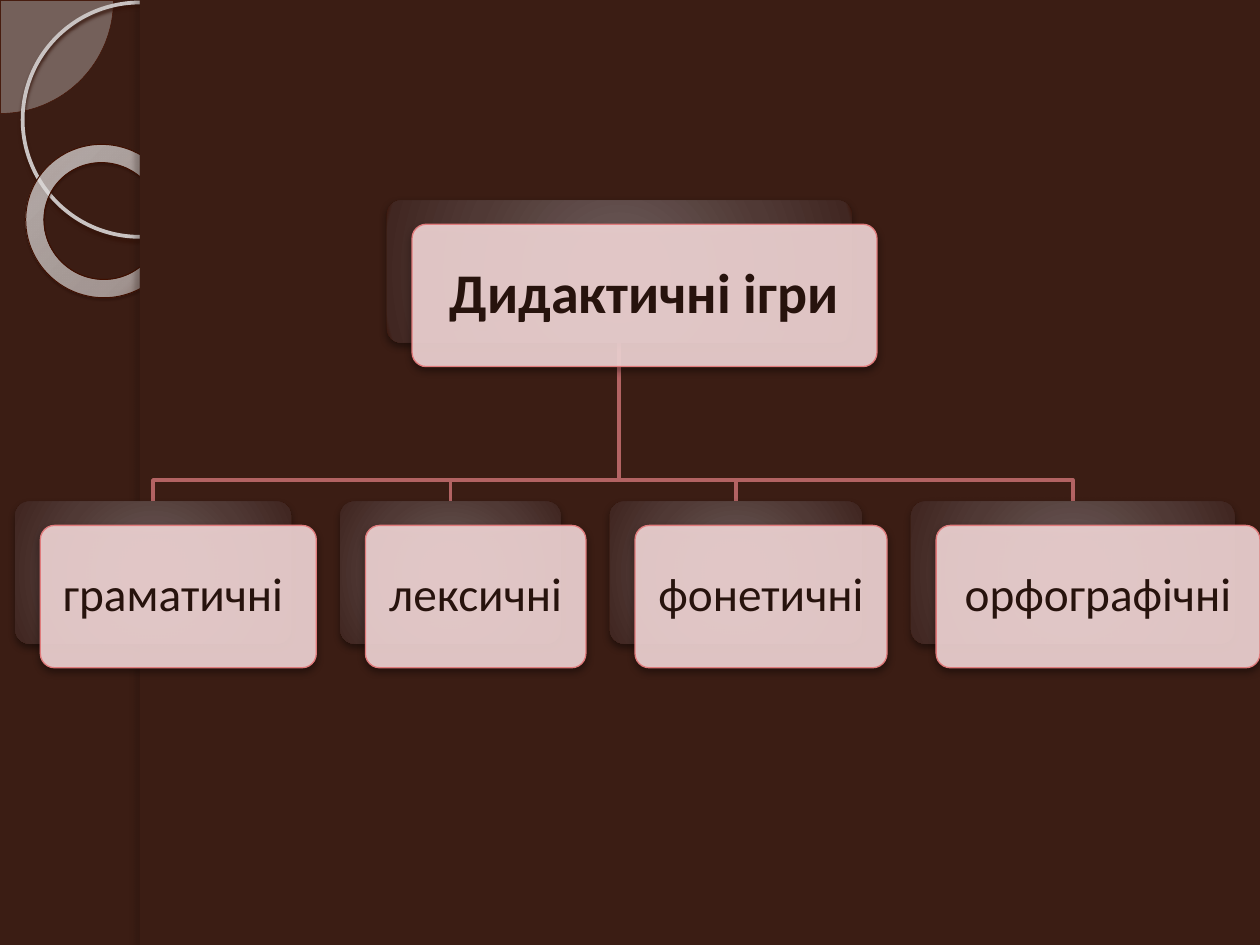
from dataclasses import dataclass
from typing import Optional

from lxml import etree
from pptx import Presentation
from pptx.dml.color import RGBColor
from pptx.enum.shapes import MSO_SHAPE as Preset
from pptx.enum.text import MSO_ANCHOR as Anchor, PP_ALIGN as Align
from pptx.oxml import parse_xml
from pptx.oxml.ns import nsdecls, qn
from pptx.util import Inches, Pt

COLORS = {
    "background": "3B1D14",
    "pie": "EBEAEA",
    "pie_line": "431000",
    "ring": "C9C3C2",
    "donut_line": "3F0F00",
    "branch": "B36363",
    "card": "F3D7D7",
    "card_line": "E07B7C",
    "text": "27130D",
}
# Gradient stops: position %, colour, opacity %
BACK_STOPS = [(0, "675552", 100), (15, "665452", 100), (62, "503935", 100),
              (97, "412722", 100), (100, "3B1205", 100)]
DONUT_STOPS = [(0, "F3F2F2", 70), (70, "F9F8F8", 55), (100, "461000", 60)]

CARD_HEIGHT = 1.13
CARD_SHIFT = (0.2, 0.19)
CHILD_TOP = 3.98
CHILD_GAP = 0.39
BRANCH_Y = 3.81
PANEL_LEFT = 1.11


@dataclass
class Shadow:
    color: str
    opacity: int
    blur: float
    distance: float
    angle: int


@dataclass
class Node:
    label: str
    left: float
    top: float
    width: float
    size: int = 27
    bold: bool = False

    @property
    def center(self) -> float:
        return self.left + self.width / 2

    @property
    def bottom(self) -> float:
        return self.top + CARD_HEIGHT


CARD_SHADOW = Shadow("000000", 43, 4.5, 2, 90)


def rgb(name: str) -> RGBColor:
    return RGBColor.from_string(COLORS[name])


def color_xml(value: str, opacity: int) -> str:
    return f'<a:srgbClr val="{value}"><a:alpha val="{opacity * 1000}"/></a:srgbClr>'


def add_shadow(shape, shadow: Shadow) -> None:
    effects = shape._element.spPr.find(qn("a:effectLst"))
    effects.append(parse_xml(
        f'<a:outerShdw {nsdecls("a")} blurRad="{Pt(shadow.blur)}" dist="{Pt(shadow.distance)}" '
        f'dir="{shadow.angle * 60000}" algn="ctr" rotWithShape="0">'
        f'{color_xml(shadow.color, shadow.opacity)}</a:outerShdw>'))


def fill_radial(shape, stops: list, focus: tuple = (50, 50, 50, 50)) -> None:
    """Replace the empty fill by a circular gradient; focus is left, top, right, bottom in %."""
    sides = " ".join(f'{side}="{value * 1000}"' for side, value in zip("ltrb", focus))
    stops_xml = "".join(f'<a:gs pos="{position * 1000}">{color_xml(color, opacity)}</a:gs>'
                        for position, color, opacity in stops)
    empty_fill = shape._element.spPr.find(qn("a:noFill"))
    empty_fill.getparent().replace(empty_fill, parse_xml(
        f'<a:gradFill {nsdecls("a")} rotWithShape="1"><a:gsLst>{stops_xml}</a:gsLst>'
        f'<a:path path="circle"><a:fillToRect {sides}/></a:path></a:gradFill>'))


def add_preset(slide, preset: Preset, left: float, top: float, width: float, height: float, *,
               fill: Optional[str] = None, opacity: int = 100, line: Optional[str] = None,
               line_width: float = 0, adjustments: tuple = (), shadow: Optional[Shadow] = None):
    shape = slide.shapes.add_shape(preset, Inches(left), Inches(top), Inches(width), Inches(height))
    for index, value in enumerate(adjustments):
        shape.adjustments[index] = value
    if fill:
        shape.fill.solid()
        shape.fill.fore_color.rgb = rgb(fill)
        if opacity < 100:
            color = shape._element.spPr.find(qn("a:solidFill"))[0]
            etree.SubElement(color, qn("a:alpha"), val=str(opacity * 1000))
    else:
        shape.fill.background()
    if line:
        shape.line.color.rgb = rgb(line)
        shape.line.width = Pt(line_width)
    else:
        shape.line.fill.background()
    shape.shadow.inherit = False
    if shadow:
        add_shadow(shape, shadow)
    return shape


def write_text(shape, text: str, *, size: int, bold: bool, inset: float) -> None:
    frame = shape.text_frame
    frame.word_wrap = True
    frame.vertical_anchor = Anchor.MIDDLE
    frame.margin_left = frame.margin_right = Inches(inset)
    frame.margin_top = frame.margin_bottom = Inches(inset)
    paragraph = frame.paragraphs[0]
    paragraph.alignment = Align.CENTER
    paragraph.line_spacing = 0.9
    run = paragraph.add_run()
    run.text = text
    run.font.name = "Calibri"
    run.font.size = Pt(size)
    run.font.bold = bold
    run.font.color.rgb = rgb("text")


def draw_side_ornament(slide) -> None:
    """Circles in the corner, cut off by the panel that covers the rest of the slide."""
    add_preset(slide, Preset.PIE, -0.89, -0.89, 1.79, 1.79, fill="pie", opacity=33,
               line="pie_line", line_width=0.25, adjustments=(0, 54.02))
    add_preset(slide, Preset.OVAL, 0.18, 0.02, 1.86, 1.86, line="ring", line_width=2.15,
               shadow=Shadow("331208", 85, 2, 2, 90))
    donut = add_preset(slide, Preset.DONUT, 0.2, 1.15, 1.23, 1.21, line="donut_line",
                       line_width=0.58, adjustments=(0.12,),
                       shadow=Shadow("1D0700", 35, 1, 1.2, 75))
    donut.rotation = 38.6
    fill_radial(donut, DONUT_STOPS, (-408, -50, 508, 150))
    add_preset(slide, Preset.RECTANGLE, PANEL_LEFT, 0, 10 - PANEL_LEFT, 7.5, fill="background")
    add_preset(slide, Preset.RECTANGLE, PANEL_LEFT, 0, 0.08, 7.5, fill="background",
               shadow=Shadow("1E0E09", 25, 3, 3, 180))


def draw_branch(slide, parent: Node, child: Node) -> None:
    corners = [(parent.center, BRANCH_Y), (child.center, BRANCH_Y), (child.center, child.top)]
    builder = slide.shapes.build_freeform(Inches(parent.center), Inches(parent.bottom))
    builder.add_line_segments([(Inches(x), Inches(y)) for x, y in corners], close=False)
    branch = builder.convert_to_shape()
    branch.fill.background()
    branch.line.color.rgb = rgb("branch")
    branch.line.width = Pt(2)
    branch.shadow.inherit = False


def draw_node(slide, node: Node) -> None:
    back = add_preset(slide, Preset.ROUNDED_RECTANGLE, node.left, node.top, node.width, CARD_HEIGHT,
                      adjustments=(0.1,), shadow=CARD_SHADOW)
    fill_radial(back, BACK_STOPS)
    card = add_preset(slide, Preset.ROUNDED_RECTANGLE, node.left + CARD_SHIFT[0],
                      node.top + CARD_SHIFT[1], node.width, CARD_HEIGHT, fill="card", opacity=90,
                      line="card_line", line_width=0.75, adjustments=(0.1,), shadow=CARD_SHADOW)
    write_text(card, node.label, size=node.size, bold=node.bold, inset=0.14)


def main() -> None:
    deck = Presentation()
    deck.slide_width, deck.slide_height = Inches(10), Inches(7.5)
    slide = deck.slides.add_slide(deck.slide_layouts[6])
    slide.background.fill.solid()
    slide.background.fill.fore_color.rgb = rgb("background")
    draw_side_ornament(slide)

    games = Node("Дидактичні ігри", 3.07, 1.59, 3.69, size=32, bold=True)
    kinds = []
    left = 0.12
    for label, width in [("граматичні ", 2.19), ("лексичні", 1.75),
                         ("фонетичні", 2), ("орфографічні", 2.57)]:
        kinds.append(Node(label, left, CHILD_TOP, width))
        left += width + CHILD_GAP

    for kind in reversed(kinds):
        draw_branch(slide, games, kind)
    for node in [games, *kinds]:
        draw_node(slide, node)
    deck.save("out.pptx")


if __name__ == "__main__":
    main()
